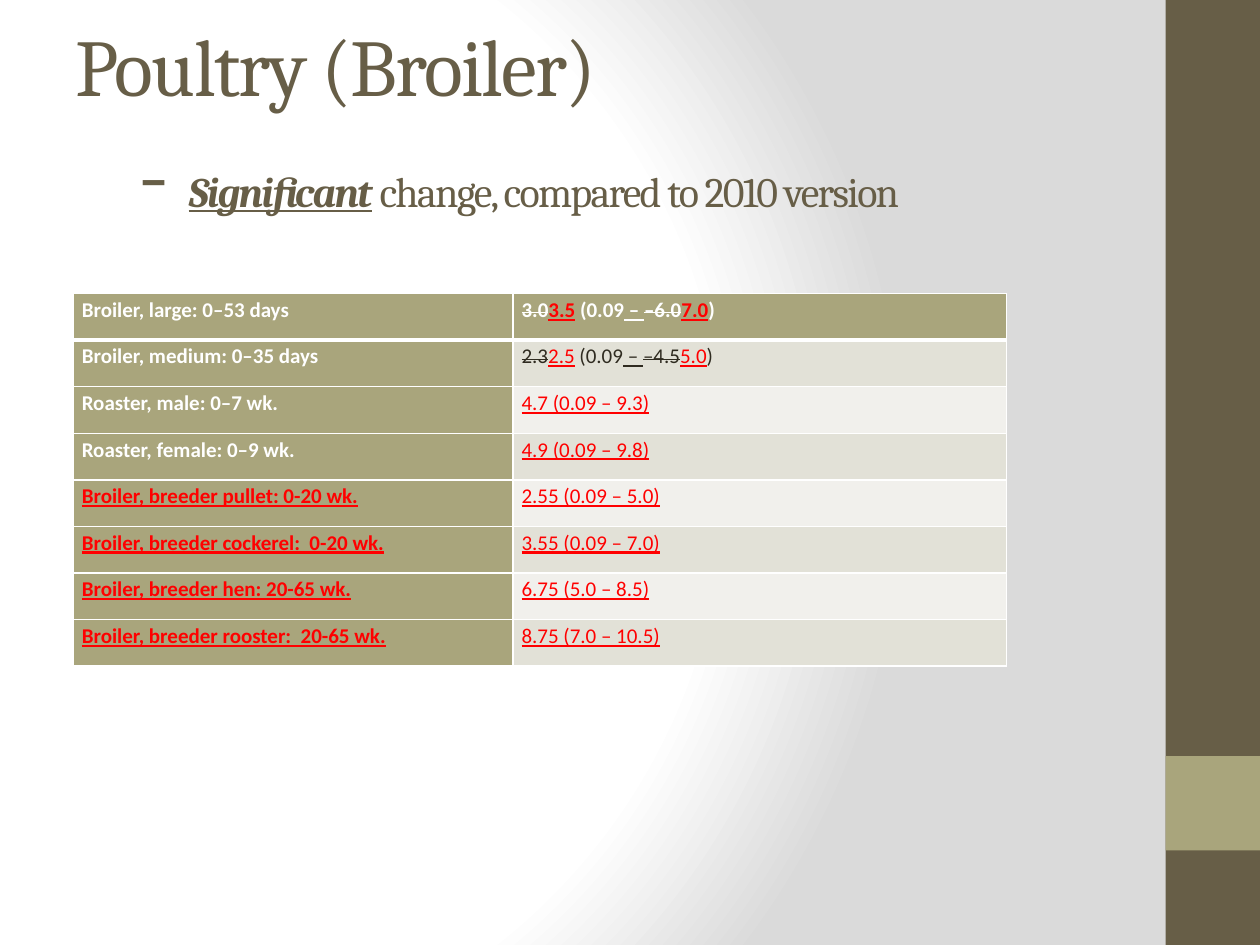
from dataclasses import dataclass

from pptx import Presentation
from pptx.dml.color import RGBColor
from pptx.enum.shapes import MSO_SHAPE
from pptx.enum.text import MSO_ANCHOR
from pptx.oxml import parse_xml
from pptx.oxml.ns import nsdecls
from pptx.util import Pt

RECTANGLE = MSO_SHAPE.RECTANGLE
TOP, MIDDLE = MSO_ANCHOR.TOP, MSO_ANCHOR.MIDDLE
PX = 9144
BLANK = 6


@dataclass(frozen=True)
class Theme:
    brown: str = "675E47"
    olive: str = "A9A57C"
    ink: str = "2F2B20"
    white: str = "FFFFFF"
    red: str = "FF0000"
    gray: str = "DADADA"
    bands: tuple = ("F1F0EC", "E2E1D7")
    heading_font: str = "Cambria"
    body_font: str = "Calibri"
    heading: int = 46
    dash: int = 54
    subtitle: int = 24
    body: int = 12


def write(paragraph, text, *, font, size, color, bold=False, italic=False,
          underline=False, strike=False, spacing=0):
    run = paragraph.add_run()
    run.text = text
    style = run.font
    style.name, style.size = font, Pt(size)
    style.bold, style.italic, style.underline = bold, italic, underline
    style.color.rgb = RGBColor.from_string(color)
    properties = run._r.get_or_add_rPr()
    if strike:
        properties.set("strike", "sngStrike")
    if spacing:
        properties.set("spc", str(spacing))


class SlideBuilder:
    def __init__(self, slide, theme):
        self.slide = slide
        self.theme = theme

    def background(self):
        fill = self.slide.background.fill
        fill.solid()
        stops = "".join(
            f'<a:gs pos="{position}000"><a:srgbClr val="{color}"/></a:gs>'
            for position, color in ((0, self.theme.white), (75, self.theme.white),
                                    (100, self.theme.gray)))
        gradient = parse_xml(
            f'<a:gradFill {nsdecls("a")} rotWithShape="1"><a:gsLst>{stops}</a:gsLst>'
            '<a:path path="circle"><a:fillToRect l="20000" t="50000" '
            'r="100000" b="50000"/></a:path></a:gradFill>')
        properties = self.slide._element.cSld.bg.bgPr
        properties.replace(properties[0], gradient)

    def block(self, box, color):
        block = self.slide.shapes.add_shape(RECTANGLE, *(n * PX for n in box))
        block.shadow.inherit = False
        block.fill.solid()
        block.fill.fore_color.rgb = RGBColor.from_string(color)
        block.line.fill.background()

    def title(self, box, heading, emphasis, remainder):
        theme = self.theme
        frame = self.slide.shapes.add_textbox(*(n * PX for n in box)).text_frame
        frame.word_wrap = True
        frame.vertical_anchor = MIDDLE
        paragraph = frame.paragraphs[0]
        look = dict(font=theme.heading_font, color=theme.brown, spacing=-100)
        write(paragraph, heading, size=theme.heading, **look)
        paragraph.add_line_break()
        write(paragraph, "\t- ", size=theme.dash, **look)
        write(paragraph, emphasis, size=theme.subtitle, bold=True, italic=True,
              underline=True, **look)
        write(paragraph, remainder, size=theme.subtitle, **look)

    def cell(self, cell, runs, fill, bold, bottom):
        cell.margin_left = cell.margin_right = 7 * PX
        cell.margin_top = cell.margin_bottom = 0
        cell.vertical_anchor = TOP
        properties = cell._tc.get_or_add_tcPr()
        for side, width in (("L", 1), ("R", 1), ("T", 1), ("B", bottom)):
            properties.append(parse_xml(
                f'<a:ln{side} {nsdecls("a")} w="{Pt(width)}"><a:solidFill>'
                f'<a:srgbClr val="{self.theme.white}"/></a:solidFill></a:ln{side}>'))
        cell.fill.solid()
        cell.fill.fore_color.rgb = RGBColor.from_string(fill)
        paragraph = cell.text_frame.paragraphs[0]
        paragraph.line_spacing = 1.15
        for text, look in runs:
            write(paragraph, text, font=self.theme.body_font, size=self.theme.body,
                  bold=bold, **look)

    def table(self, left, top, widths, row_height, rows):
        table = self.slide.shapes.add_table(
            len(rows), len(widths), left * PX, top * PX,
            sum(widths) * PX, row_height * len(rows) * PX).table
        table.horz_banding = False
        for column, width in zip(table.columns, widths):
            column.width = width * PX
        for index, (animal, values) in enumerate(rows):
            table.rows[index].height = row_height * PX
            header = index == 0
            band = self.theme.olive if header else self.theme.bands[index % 2]
            bottom = 3 if header else 1
            self.cell(table.cell(index, 0), animal, self.theme.olive, True, bottom)
            self.cell(table.cell(index, 1), values, band, header, bottom)


def main():
    theme = Theme()
    presentation = Presentation()
    presentation.slide_width, presentation.slide_height = 1000 * PX, 750 * PX
    slide = presentation.slides.add_slide(presentation.slide_layouts[BLANK])
    builder = SlideBuilder(slide, theme)
    added = dict(color=theme.red, underline=True)
    kept = dict(color=theme.white)

    def revised(color, old_mean, new_mean, old_high, new_high):
        plain = dict(color=color)
        removed = dict(color=color, strike=True)
        return [(old_mean, removed), (new_mean, added), (" (0.09", plain),
                (" – ", dict(color=color, underline=True)),
                (f"–{old_high}", removed), (new_high, added), (")", plain)]

    new_values = (
        ("Roaster, male: 0–7 wk.", kept, "4.7 (0.09 – 9.3)"),
        ("Roaster, female: 0–9 wk.", kept, "4.9 (0.09 – 9.8)"),
        ("Broiler, breeder pullet: 0-20 wk.", added, "2.55 (0.09 – 5.0)"),
        ("Broiler, breeder cockerel:  0-20 wk.", added, "3.55 (0.09 – 7.0)"),
        ("Broiler, breeder hen: 20-65 wk.", added, "6.75 (5.0 – 8.5)"),
        ("Broiler, breeder rooster:  20-65 wk.", added, "8.75 (7.0 – 10.5)"),
    )
    rows = [
        ([("Broiler, large: 0–53 days", kept)],
         revised(theme.white, "3.0", "3.5", "6.0", "7.0")),
        ([("Broiler, medium: 0–35 days", kept)],
         revised(theme.ink, "2.3", "2.5", "4.5", "5.0")),
    ]
    rows += [([(animal, look)], [(value, added)]) for animal, look, value in new_values]

    builder.background()
    builder.block((925, 0, 75, 750), theme.brown)
    builder.block((925, 600, 75, 75), theme.olive)
    builder.title((50, 50, 833, 92), "Poultry (Broiler)", "Significant",
                  " change, compared to 2010 version")
    builder.table(58, 233, (349, 392), 37, rows)
    presentation.save("out.pptx")


if __name__ == "__main__":
    main()
